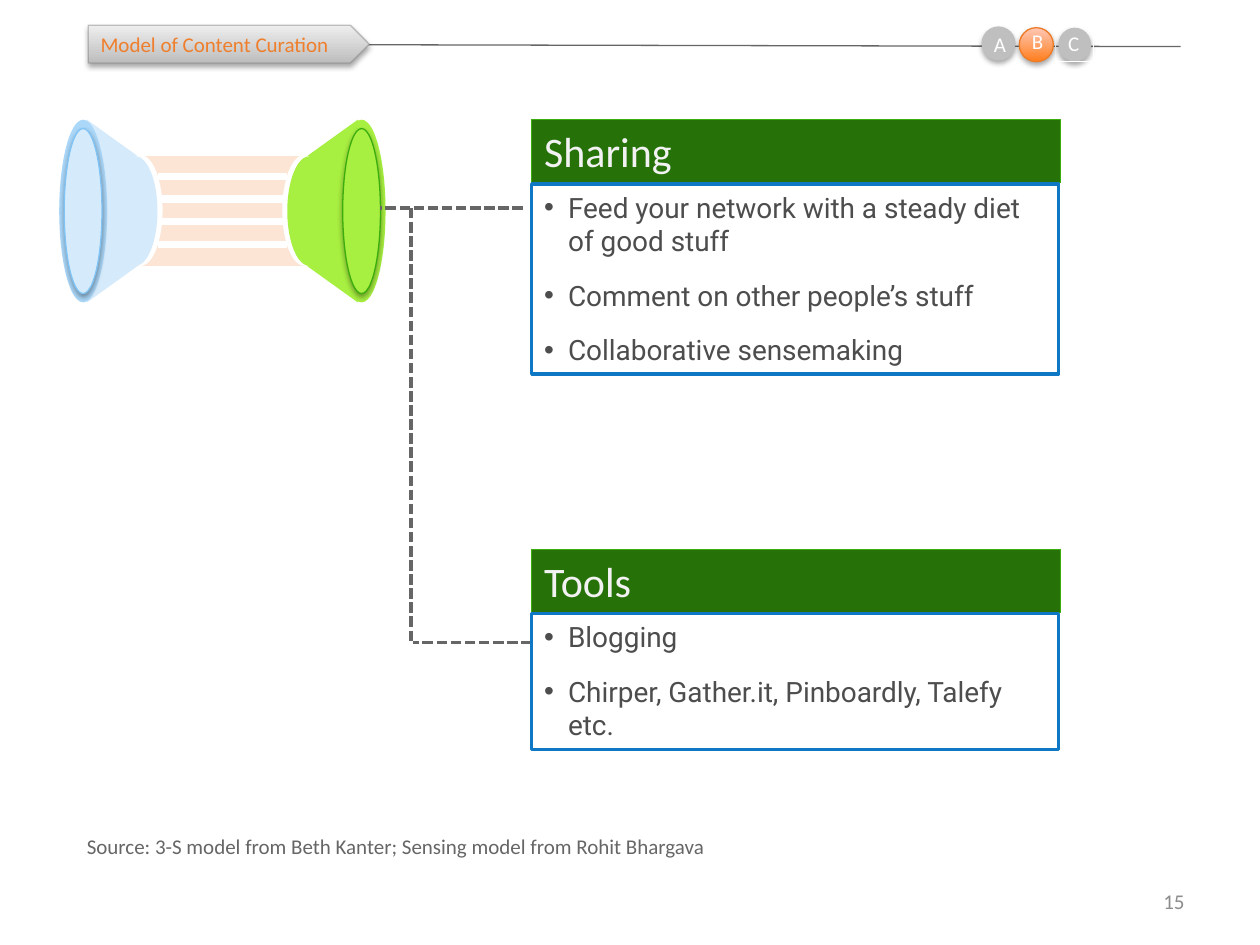
from collections import namedtuple

from lxml.etree import SubElement
from pptx import Presentation
from pptx.dml.color import RGBColor
from pptx.enum.dml import MSO_LINE_DASH_STYLE as Dash
from pptx.enum.shapes import MSO_CONNECTOR as Connector, MSO_SHAPE as Shape
from pptx.enum.text import MSO_ANCHOR as Anchor, PP_ALIGN as Align
from pptx.oxml.ns import qn
from pptx.util import Inches, Pt

Box = namedtuple("Box", "left top width height")

WHITE, GREY, SILVER = "FFFFFF", "666666", "BFBFBF"
LIME, GREEN, DARK_GREEN = "A7EF40", "3BAD0E", "267209"
PALE_BLUE, BLUE = "D5EBFC", "0F78C5"


def color(value):
    return RGBColor.from_string(value)


def add_alpha(node, percent):
    SubElement(node, qn("a:alpha"), val=str(percent * 1000))


def add_shadow(shape, percent=35, blur=3.1, distance=1.8):
    effects = shape._element.spPr.find(qn("a:effectLst"))
    outer = SubElement(effects, qn("a:outerShdw"), blurRad=str(Pt(blur)),
                       dist=str(Pt(distance)), dir="5400000", rotWithShape="0")
    add_alpha(SubElement(outer, qn("a:srgbClr"), val="000000"), percent)


def draw_shape(page, kind, box, fill=None, line=None, width=0.75, shadow=False):
    shape = page.shapes.add_shape(kind, *map(Inches, box))
    shape.shadow.inherit = False
    if isinstance(fill, tuple):
        shape.fill.gradient()
        shape.fill.gradient_angle = 90
        for stop, shade in zip(shape.fill.gradient_stops, fill):
            stop.color.rgb = color(shade)
    elif fill:
        shape.fill.solid()
        shape.fill.fore_color.rgb = color(fill)
    else:
        shape.fill.background()
    if line:
        shape.line.color.rgb = color(line)
        shape.line.width = Pt(width)
    else:
        shape.line.fill.background()
    if shadow:
        add_shadow(shape)
    return shape


def draw_line(page, start, end, shade=GREY, width=2, dash=None):
    line = page.shapes.add_connector(Connector.STRAIGHT, *map(Inches, start + end))
    line.line.color.rgb = color(shade)
    line.line.width = Pt(width)
    if dash:
        line.line.dash_style = dash
    SubElement(line._element.spPr, qn("a:effectLst"))


def write_text(shape, *texts, size=12, font="Calibri", shade=GREY,
               align=Align.LEFT, anchor=Anchor.TOP, bullets=False):
    frame = shape.text_frame
    frame.word_wrap = True
    frame.vertical_anchor = anchor
    for index, text in enumerate(texts):
        para = frame.add_paragraph() if index else frame.paragraphs[0]
        para.alignment = align
        span = para.add_run()
        span.text = text
        span.font.size = Pt(size)
        span.font.name = font
        span.font.color.rgb = color(shade)
        if bullets:
            para.space_after = Pt(12)
            props = para._p.get_or_add_pPr()
            props.set("marL", str(Inches(0.19)))
            props.set("indent", str(-Inches(0.19)))
            SubElement(props, qn("a:buFont"), typeface="Arial")
            SubElement(props, qn("a:buChar"), char="•")


def add_text(page, box, text, **style):
    write_text(page.shapes.add_textbox(*map(Inches, box)), text, **style)


def draw_cone(page, box, mirrored, rim, face, edge):
    def oval(offset, top, width, height, fill, **style):
        left = box.width - offset - width if mirrored else offset
        draw_shape(page, Shape.OVAL, (box.left + left, box.top + top, width, height),
                   fill, **style)

    oval(0, 0, 0.38, 1.45, rim)
    oval(0.04, 0.07, 0.3, 1.31, face, line=edge, shadow=True)
    oval(0.47, 0.28, 0.35, 0.88, WHITE)
    oval(0.43, 0.29, 0.35, 0.87, face)


def draw_funnel(page, box):
    length, depth = 1.45, 1.01
    for offset, turn, fill in ((box.width - length, 270, LIME), (0, 90, PALE_BLUE)):
        triangle = draw_shape(page, Shape.ISOSCELES_TRIANGLE,
                              (box.left + offset, box.top + 0.22, length, depth), fill)
        triangle.rotation = turn
    draw_shape(page, Shape.RECTANGLE,
               (box.left + 0.62, box.top + 0.29, 1.37, 0.87), "FCE5D5")
    for index in range(4):
        level = box.top + 0.45 + 0.18 * index
        draw_line(page, (box.left + 0.78, level), (box.left + 1.81, level), WHITE, 4.25)
    draw_cone(page, box, False, "ABD7F9", PALE_BLUE, "80C4F5")
    draw_cone(page, box, True, LIME, LIME, GREEN)


def draw_panel(page, box, title, items):
    heading = draw_shape(page, Shape.RECTANGLE, (box.left, box.top, box.width, 0.5),
                         DARK_GREEN, GREEN)
    write_text(heading, title, size=24, shade="F2F2F2")
    body = draw_shape(page, Shape.RECTANGLE,
                      (box.left, box.top + 0.51, box.width - 0.02, box.height - 0.51),
                      line=BLUE, width=2)
    write_text(body, *items, size=16, font="Roboto", shade="4D4D4D", bullets=True)


def draw_branches(page, box):
    right, bottom = box.left + box.width, box.top + box.height
    trunk = box.left + 0.24
    for start, end in (((right - 0.07, box.top), (box.left, box.top)),
                       ((trunk, box.top), (trunk, bottom)),
                       ((right, bottom), (trunk + 0.02, bottom))):
        draw_line(page, start, end, dash=Dash.SQUARE_DOT)


def draw_header(page, box):
    left, top = box.left, box.top
    draw_line(page, (left, top + 0.15), (left + box.width, top + 0.17), width=0.75)
    draw_shape(page, Shape.OVAL, (left + 7.7, top + 0.02, 0.26, 0.27), SILVER, shadow=True)
    frame = draw_shape(page, Shape.RECTANGLE, (left + 7.68, top - 0.01, 0.3, 0.3), line=WHITE)
    write_text(frame, "C", shade=WHITE)
    tag = draw_shape(page, Shape.PENTAGON, (left, top, 2.23, 0.3),
                     ("BDBDBD", "EEEEEE"), "808080", shadow=True)
    add_alpha(tag.line._ln.find(".//" + qn("a:srgbClr")), 43)
    write_text(tag, "Model of Content Curation", shade="EF7F2C", anchor=Anchor.MIDDLE)
    for letter, offset, drop, lift, fill, edge in (
            ("A", 7.09, 0.01, 0, SILVER, None),
            ("B", 7.39, 0.02, -0.02, ("FF7D1C", "FFC8B6"), "EE7B26")):
        draw_shape(page, Shape.OVAL, (left + offset, top + drop, 0.27, 0.27),
                   fill, edge, shadow=True)
        add_text(page, (left + offset, top + lift, 0.31, 0.3), letter, shade=WHITE)


def draw_footer(page, box):
    add_text(page, (box.left, box.top, 5.19, 0.3),
             "Source: 3-S model from Beth Kanter; Sensing model from Rohit Bhargava")
    add_text(page, (box.left + box.width - 2.33, box.top + 0.38, 2.33, 0.4), "15",
             shade="8C8C8C", align=Align.RIGHT, anchor=Anchor.MIDDLE)


def main():
    deck = Presentation()
    deck.slide_width, deck.slide_height = Inches(10), Inches(7.5)
    page = deck.slides.add_slide(deck.slide_layouts[6])
    draw_funnel(page, Box(0.47, 0.95, 2.59, 1.45))
    draw_panel(page, Box(4.22, 0.95, 4.2, 2.02), "Sharing",
               ("Feed your network with a steady diet of good stuff",
                "Comment on other people’s stuff",
                "Collaborative sensemaking"))
    draw_branches(page, Box(3.02, 1.65, 1.2, 3.45))
    draw_panel(page, Box(4.22, 4.36, 4.2, 1.59), "Tools",
               ("Blogging", "Chirper, Gather.it, Pinboardly, Talefy etc."))
    draw_header(page, Box(0.7, 0.2, 8.67, 0.3))
    draw_footer(page, Box(0.59, 6.57, 8.91, 0.78))
    deck.save("out.pptx")


if __name__ == "__main__":
    main()
